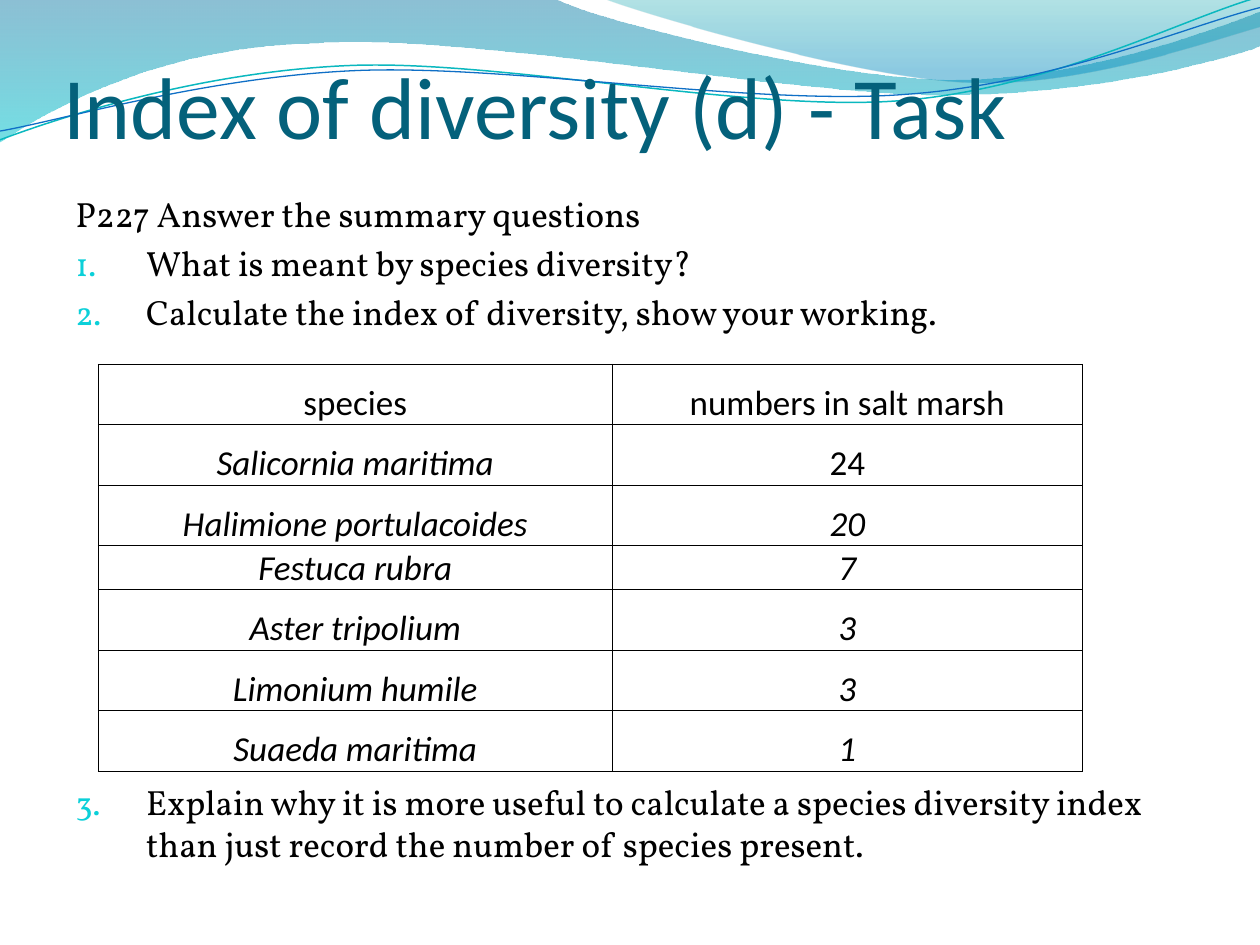
"""Build the index of diversity task slide with its wave header and species table."""
from dataclasses import dataclass
from math import cos, radians, sin
from typing import Optional

from lxml.etree import SubElement
from pptx import Presentation
from pptx.dml.color import RGBColor
from pptx.enum.text import MSO_ANCHOR as Anchor, MSO_AUTO_SIZE as AutoSize, PP_ALIGN as Align
from pptx.oxml import parse_xml
from pptx.oxml.ns import nsdecls, qn
from pptx.util import Emu, Pt

PX = 9144
TILT = 357.3
COLORS = {
    "title": "04617B", "text": "000000", "bullet": "0BD0D9",
    "deep": "0074A1", "aqua": "00C6CF", "teal": "00A1A9", "blue": "008BBF",
    "cyan_line": "0AB8BF", "blue_line": "0F6FC6",
}


@dataclass
class Stop:
    position: float
    color: str
    opacity: int


@dataclass
class Wave:
    start: tuple
    segments: list
    stops: Optional[list] = None
    line: Optional[str] = None
    width: float = 0
    center: tuple = (0, 0)
    tilt: float = 0


@dataclass
class Item:
    text: str
    numbered: bool = True
    before: int = 4


BANDS = [
    Wave((0, 0), [
        (440, -1), (476, 17, 664, 63, 758, 63), (853, 63, 958, 26, 1000, 9),
        (1001, 36), (983, 44, 870, 76, 746, 75), (622, 75, 382, 28, 257, 34),
        (129, 36, 46, 83, -1, 113),
    ], stops=[Stop(0, "deep", 45), Stop(1, "aqua", 55)]),
    Wave((479, -1), [
        (509, 11, 682, 62, 769, 65), (856, 69, 961, 32, 1000, 21), (1000, 0),
    ], stops=[Stop(0, "teal", 30), Stop(0.8, "blue", 45)]),
]
STRANDS = [
    Wave((0, 111), [
        (48, 93, 158, 57, 277, 52), (395, 47, 593, 89, 713, 80), (833, 71, 938, 15, 998, -2),
    ], line="cyan_line", width=0.85, center=(499, 57.5), tilt=TILT),
    Wave((0, 104), [
        (47, 96, 164, 61, 283, 56), (403, 51, 597, 84, 717, 75), (836, 67, 941, 21, 1000, 6),
    ], line="blue_line", width=0.75, center=(499.5, 59), tilt=TILT),
]
ITEMS = [
    Item("P227 Answer the summary questions", numbered=False),
    Item("What is meant by species diversity?"),
    Item("Calculate the index of diversity, show your working."),
    Item("Explain why it is more useful to calculate a species diversity index "
         "than just record the number of species present.", before=256),
]
ROWS = [
    ("species", "numbers in salt marsh"),
    ("Salicornia maritima", "24"),
    ("Halimione portulacoides", "20"),
    ("Festuca rubra", "7"),
    ("Aster tripolium", "3"),
    ("Limonium humile", "3"),
    ("Suaeda maritima", "1"),
]
UPRIGHT = {"species", "numbers in salt marsh", "24"}
COL_WIDTHS = (408, 373)
ROW_HEIGHTS = (48, 48, 48, 33, 48, 48, 48)


def px(n: float) -> Emu:
    return Emu(round(n * PX))


def rgb(name: str) -> RGBColor:
    return RGBColor.from_string(COLORS[name])


def place(sp, x: int, y: int, w: int, h: int) -> None:
    sp.left, sp.top, sp.width, sp.height = map(px, (x, y, w, h))


def set_font(p, name: str, size: int, color: str, italic: bool = False) -> None:
    f = p.font
    f.name, f.size, f.italic = name, Pt(size), italic
    f.color.rgb = rgb(color)


def level(wave: Wave, x: float, y: float) -> tuple:
    cx, cy = wave.center
    a = radians(-wave.tilt)
    dx, dy = x - cx, y - cy
    return px(cx + dx * cos(a) - dy * sin(a)), px(cy + dx * sin(a) + dy * cos(a))


def bend(sp, segments: list) -> None:
    lines = iter(list(sp.element.iter(qn("a:lnTo"))))
    for seg in segments:
        first = next(lines)
        if len(seg) == 2:
            continue
        curve = parse_xml(f'<a:cubicBezTo {nsdecls("a")}/>')
        first.addprevious(curve)
        for ln in (first, next(lines), next(lines)):
            curve.append(ln[0])
            ln.getparent().remove(ln)


def draw_wave(shapes, wave: Wave) -> None:
    points = [level(wave, *seg[i:i + 2])
              for seg in wave.segments for i in range(0, len(seg), 2)]
    builder = shapes.build_freeform(*level(wave, *wave.start))
    builder.add_line_segments(points, close=bool(wave.stops))
    sp = builder.convert_to_shape()
    bend(sp, wave.segments)
    sp.rotation = wave.tilt
    sp.shadow.inherit = False
    if wave.stops:
        sp.line.fill.background()
        sp.fill.gradient()
        sp.fill.gradient_angle = 270
        for target, stop in zip(sp.fill.gradient_stops, wave.stops):
            target.position = stop.position
            target.color.rgb = rgb(stop.color)
        for clr, stop in zip(sp.element.spPr.iter(qn("a:srgbClr")), wave.stops):
            SubElement(clr, qn("a:alpha"), val=str(stop.opacity * 1000))
    else:
        sp.fill.background()
        sp.line.color.rgb = rgb(wave.line)
        sp.line.width = Pt(wave.width)


def write_title(sp) -> None:
    place(sp, 50, 0, 900, 125)
    tf = sp.text_frame
    tf.auto_size, tf.vertical_anchor = AutoSize.NONE, Anchor.BOTTOM
    tf.margin_left = tf.margin_right = tf.margin_bottom = 0
    tf.text = "Index of diversity (d) - Task"
    p = tf.paragraphs[0]
    p.alignment = Align.LEFT
    set_font(p, "Calibri", 50, "title")


def set_bullet(p, numbered: bool) -> None:
    pPr = p._p.get_or_add_pPr()
    indent = px(56 if numbered else 30)
    pPr.set("marL", str(indent))
    pPr.set("indent", str(-indent))
    marks = [f'<a:buClr {nsdecls("a")}><a:srgbClr val="{COLORS["bullet"]}"/></a:buClr>',
             f'<a:buSzPct {nsdecls("a")} val="95000"/>',
             f'<a:buFont {nsdecls("a")} typeface="Vollkorn"/>',
             f'<a:buAutoNum {nsdecls("a")} type="arabicPeriod"/>']
    at = pPr.index(pPr.find(qn("a:defRPr")))
    for i, mark in enumerate(marks if numbered else [f'<a:buNone {nsdecls("a")}/>']):
        pPr.insert(at + i, parse_xml(mark))


def write_body(sp, items: list) -> None:
    place(sp, 50, 148, 900, 578)
    tf = sp.text_frame
    tf.auto_size = AutoSize.NONE
    for i, item in enumerate(items):
        p = tf.add_paragraph() if i else tf.paragraphs[0]
        p.text = item.text
        p.space_before = Pt(item.before)
        set_font(p, "Vollkorn", 20, "text")
        set_bullet(p, item.numbered)


def format_cell(cell, text: str) -> None:
    cell.text = text
    cell.vertical_anchor = Anchor.BOTTOM
    cell.margin_left = cell.margin_right = cell.margin_top = px(1)
    cell.margin_bottom = 0
    p = cell.text_frame.paragraphs[0]
    p.alignment = Align.CENTER
    set_font(p, "Calibri", 20, "text", italic=text not in UPRIGHT)
    tcPr = cell._tc.get_or_add_tcPr()
    for side in "LRTB":
        ln = SubElement(tcPr, qn(f"a:ln{side}"), w=str(Pt(0.5)))
        SubElement(SubElement(ln, qn("a:solidFill")), qn("a:srgbClr"), val=COLORS["text"])
    cell.fill.background()


def draw_table(s) -> None:
    box = map(px, (78, 289, sum(COL_WIDTHS), sum(ROW_HEIGHTS)))
    table = s.shapes.add_table(len(ROWS), len(COL_WIDTHS), *box).table
    table.first_row = table.horz_banding = False
    for col, w in zip(table.columns, COL_WIDTHS):
        col.width = px(w)
    for row, h, texts in zip(table.rows, ROW_HEIGHTS, ROWS):
        row.height = px(h)
        for cell, text in zip(row.cells, texts):
            format_cell(cell, text)


def main() -> None:
    prs = Presentation()
    prs.slide_width, prs.slide_height = px(1000), px(750)
    s = prs.slides.add_slide(prs.slide_layouts[1])
    title, body = s.placeholders
    for wave in BANDS:
        draw_wave(s.shapes, wave)
    strands = s.shapes.add_group_shape().shapes
    for wave in STRANDS:
        draw_wave(strands, wave)
    for sp in (title, body):
        s.shapes.element.append(sp.element)
    write_title(title)
    write_body(body, ITEMS)
    draw_table(s)
    prs.save("out.pptx")


if __name__ == "__main__":
    main()
